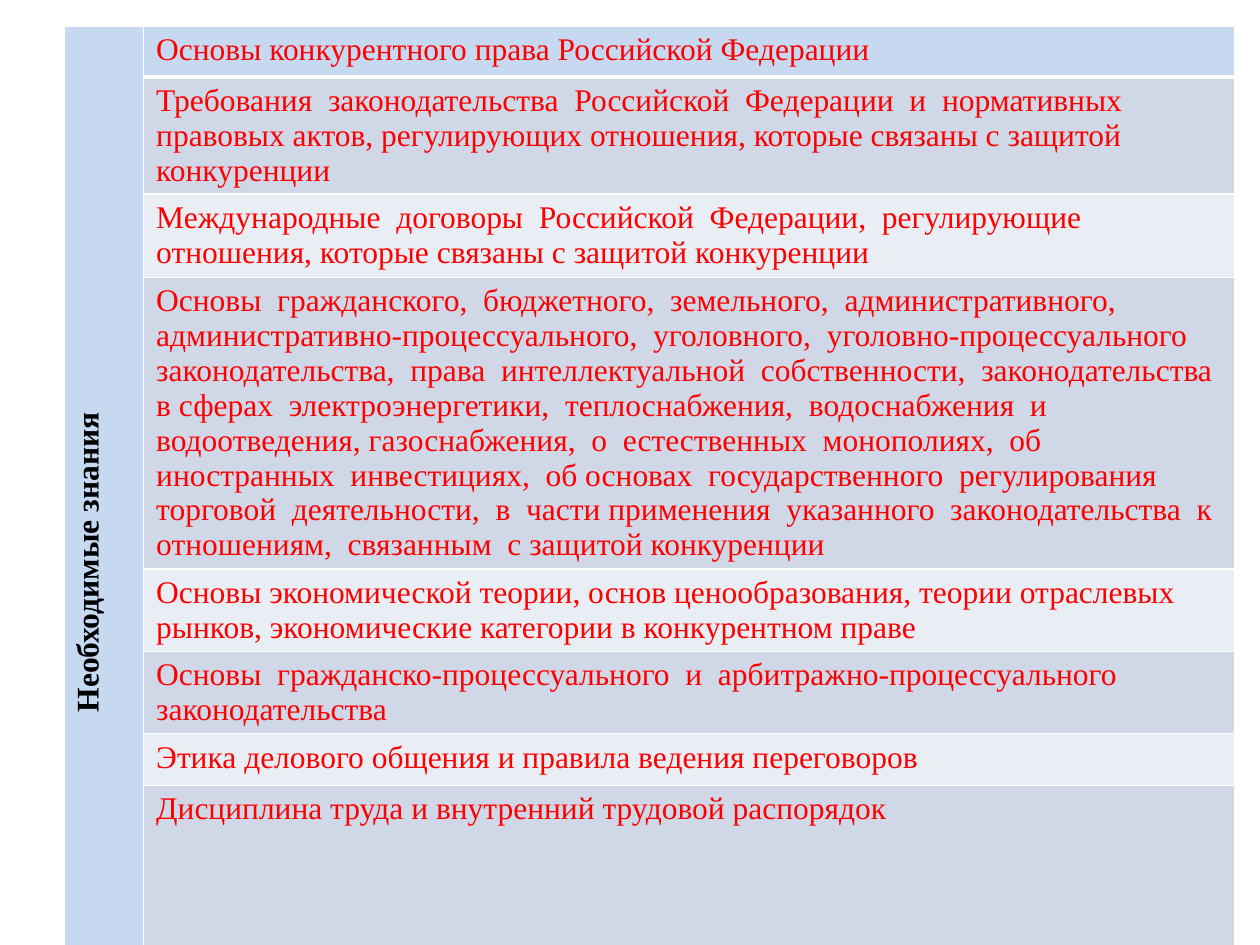
from lxml.etree import SubElement
from pptx import Presentation
from pptx.dml.color import RGBColor
from pptx.enum.text import PP_ALIGN as Align
from pptx.oxml.ns import qn
from pptx.util import Inches, Pt

FONT = "Times New Roman"
HEADER_FILL = "C6D9F1"
BAND_FILLS = ("E9EDF4", "D0D8E8")
SECTION = "Необходимые знания"
COLUMN_WIDTHS = (0.63, 8.66)

# Row height in inches and the text of the row
KNOWLEDGE = [
    (0.4, "Основы конкурентного права Российской Федерации"),
    (0.93, "Требования  законодательства  Российской  Федерации  и  нормативных  "
           "правовых актов, регулирующих отношения, которые связаны с защитой конкуренции"),
    (0.66, "Международные  договоры  Российской  Федерации,  регулирующие  "
           "отношения, которые связаны с защитой конкуренции"),
    (2.31, "Основы  гражданского,  бюджетного,  земельного,  административного, "
           "административно-процессуального,  уголовного,  уголовно-процессуального "
           "законодательства,  права  интеллектуальной  собственности,  законодательства  "
           "в сферах  электроэнергетики,  теплоснабжения,  водоснабжения  и  "
           "водоотведения, газоснабжения,  о  естественных  монополиях,  об  "
           "иностранных  инвестициях,  об основах  государственного  регулирования  "
           "торговой  деятельности,  в  части применения  указанного  законодательства  к  "
           "отношениям,  связанным  с защитой конкуренции"),
    (0.65, "Основы экономической теории, основ ценообразования, теории отраслевых "
           "рынков, экономические категории в конкурентном праве"),
    (0.65, "Основы  гражданско-процессуального  и  арбитражно-процессуального "
           "законодательства"),
    (0.41, "Этика делового общения и правила ведения переговоров"),
    (1.28, "Дисциплина труда и внутренний трудовой распорядок"),
]


def color(value):
    return RGBColor.from_string(value)


def set_borders(cell, bottom):
    """Draw white 1 pt borders, with the bottom one of the given width in points."""
    properties = cell._tc.get_or_add_tcPr()
    for index, (tag, width) in enumerate(
            (("lnL", 1), ("lnR", 1), ("lnT", 1), ("lnB", bottom))):
        line = SubElement(properties, qn(f"a:{tag}"), w=str(Pt(width)))
        fill = SubElement(line, qn("a:solidFill"))
        SubElement(fill, qn("a:srgbClr"), val="FFFFFF")
        properties.insert(index, line)


def fill_cell(cell, text, fill, text_color, bold=False, bottom=1):
    cell.text = text
    cell.fill.solid()
    cell.fill.fore_color.rgb = color(fill)
    set_borders(cell, bottom)
    font = cell.text_frame.paragraphs[0].runs[0].font
    for name, value in {"name": FONT, "size": Pt(18), "bold": bold}.items():
        setattr(font, name, value)
    font.color.rgb = color(text_color)


def add_knowledge_table(slide, left, top):
    """Place the table with a vertical section heading beside its rows."""
    width, height = sum(COLUMN_WIDTHS), sum(row[0] for row in KNOWLEDGE)
    table = slide.shapes.add_table(
        len(KNOWLEDGE), len(COLUMN_WIDTHS),
        Inches(left), Inches(top), Inches(width), Inches(height)).table
    for column, column_width in zip(table.columns, COLUMN_WIDTHS):
        column.width = Inches(column_width)

    for index, (row_height, text) in enumerate(KNOWLEDGE):
        table.rows[index].height = Inches(row_height)
        fill = BAND_FILLS[index % 2] if index else HEADER_FILL
        fill_cell(table.cell(index, 1), text, fill, "FF0000",
                  bottom=1 if index else 3)

    heading = table.cell(0, 0)
    heading.merge(table.cell(len(KNOWLEDGE) - 1, 0))
    fill_cell(heading, SECTION, HEADER_FILL, "000000", bold=True, bottom=3)
    heading.text_frame.paragraphs[0].alignment = Align.CENTER
    heading._tc.get_or_add_tcPr().set("vert", "vert270")


def main():
    presentation = Presentation()
    presentation.slide_width = Inches(10)
    presentation.slide_height = Inches(7.5)
    slide = presentation.slides.add_slide(presentation.slide_layouts[6])
    add_knowledge_table(slide, 0.51, 0.21)
    presentation.save("out.pptx")


if __name__ == "__main__":
    main()
